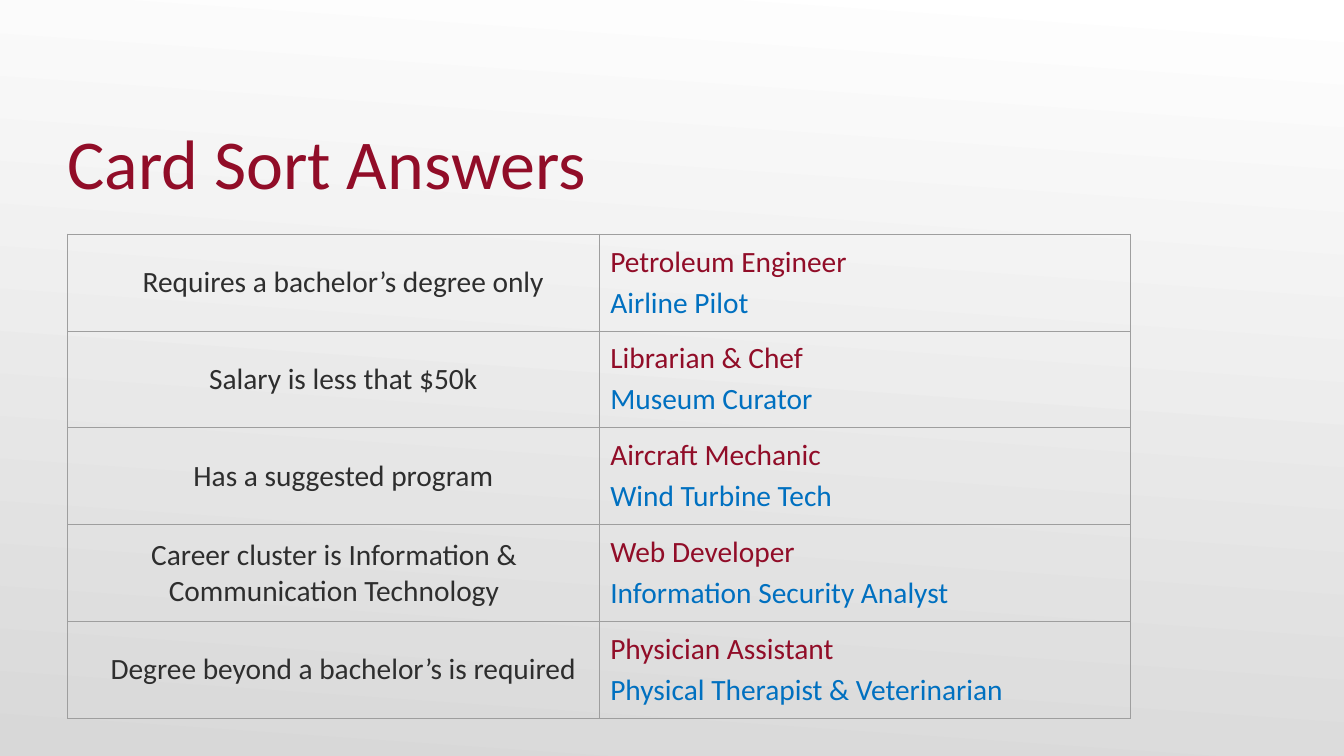
from lxml import etree
from pptx import Presentation
from pptx import util as u
from pptx.dml import color
from pptx.enum import text
from pptx.oxml import ns

ANSWERS = [
    ("Requires a bachelor’s degree only", 0.5, "Petroleum Engineer", "Airline Pilot"),
    ("Salary is less that $50k", 0.5, "Librarian & Chef", "Museum Curator"),
    ("Has a suggested program", 0.5, "Aircraft Mechanic", "Wind Turbine Tech"),
    ("Career cluster is Information & Communication Technology", 0.03,
     "Web Developer", "Information Security Analyst"),
    ("Degree beyond a bachelor’s is required", 0.5,
     "Physician Assistant", "Physical Therapist & Veterinarian"),
]


def rgb(value):
    return color.RGBColor.from_string(value)


class AnswerSlide:
    font = "Calibri"
    crimson, blue, ink, border = "910D28", "0070C0", "2E2E2E", "9E9E9E"
    title_size, body_size = 50, 21
    left = u.Cm(1.7)

    def __init__(self, deck):
        self.slide = deck.slides.add_slide(deck.slide_layouts[6])

    def background(self, top, bottom):
        fill = self.slide.background.fill
        fill.gradient()
        fill.gradient_angle = 266
        for stop, shade, position in zip(fill.gradient_stops, (top, bottom), (0, 1)):
            stop.color.rgb = rgb(shade)
            stop.position = position

    def add_words(self, paragraph, words, size, shade):
        run = paragraph.add_run()
        run.text = words
        run.font.name = self.font
        run.font.size = u.Pt(size)
        run.font.color.rgb = rgb(shade)

    def title(self, words):
        heading = self.slide.shapes.add_textbox(self.left, u.Cm(1.96), u.Cm(30.48), u.Cm(3.17))
        frame = heading.text_frame
        frame.word_wrap = True
        frame.vertical_anchor = text.MSO_ANCHOR.BOTTOM
        frame.margin_left = frame.margin_right = frame.margin_bottom = 0
        frame.margin_top = u.Cm(0.18)
        self.add_words(frame.paragraphs[0], words, self.title_size, self.crimson)

    def outline(self, cell):
        properties = cell._tc.get_or_add_tcPr()
        for index, side in enumerate(("lnL", "lnR", "lnT", "lnB")):
            line = etree.Element(ns.qn(f"a:{side}"), w=str(u.Pt(0.75)))
            fill = etree.SubElement(line, ns.qn("a:solidFill"))
            etree.SubElement(fill, ns.qn("a:srgbClr"), val=self.border)
            properties.insert(index, line)

    def cell(self, cell, lines, indent, align):
        cell.fill.background()
        self.outline(cell)
        cell.margin_left = cell.margin_right = u.Cm(0.25)
        cell.margin_top = cell.margin_bottom = u.Cm(0.25)
        frame = cell.text_frame
        for index, (words, shade) in enumerate(lines):
            paragraph = frame.add_paragraph() if index else frame.paragraphs[0]
            properties = paragraph._p.get_or_add_pPr()
            properties.set("marL", str(u.Cm(indent)))
            properties.set("indent", "0")
            paragraph.alignment = align
            if index:
                paragraph.space_before = u.Pt(3.6)
            self.add_words(paragraph, words, self.body_size, shade)

    def table(self, answers):
        width, height = u.Cm(13.4), u.Cm(2.44)
        grid = self.slide.shapes.add_table(
            len(answers), 2, self.left, u.Cm(5.9), 2 * width, len(answers) * height).table
        grid.first_row = grid.horz_banding = False
        for column in grid.columns:
            column.width = width
        for index, (clue, indent, first, second) in enumerate(answers):
            grid.rows[index].height = height
            prompt = grid.cell(index, 0)
            prompt.vertical_anchor = text.MSO_ANCHOR.MIDDLE
            self.cell(prompt, [(clue, self.ink)], indent, text.PP_ALIGN.CENTER)
            careers = [(first, self.crimson), (second, self.blue)]
            self.cell(grid.cell(index, 1), careers, 0.03, text.PP_ALIGN.LEFT)


def main():
    deck = Presentation()
    deck.slide_width, deck.slide_height = u.Cm(33.87), u.Cm(19.05)
    page = AnswerSlide(deck)
    page.background("FFFFFF", "D8D8D8")
    page.table(ANSWERS)
    page.title("Card Sort Answers")
    deck.save("out.pptx")


if __name__ == "__main__":
    main()
